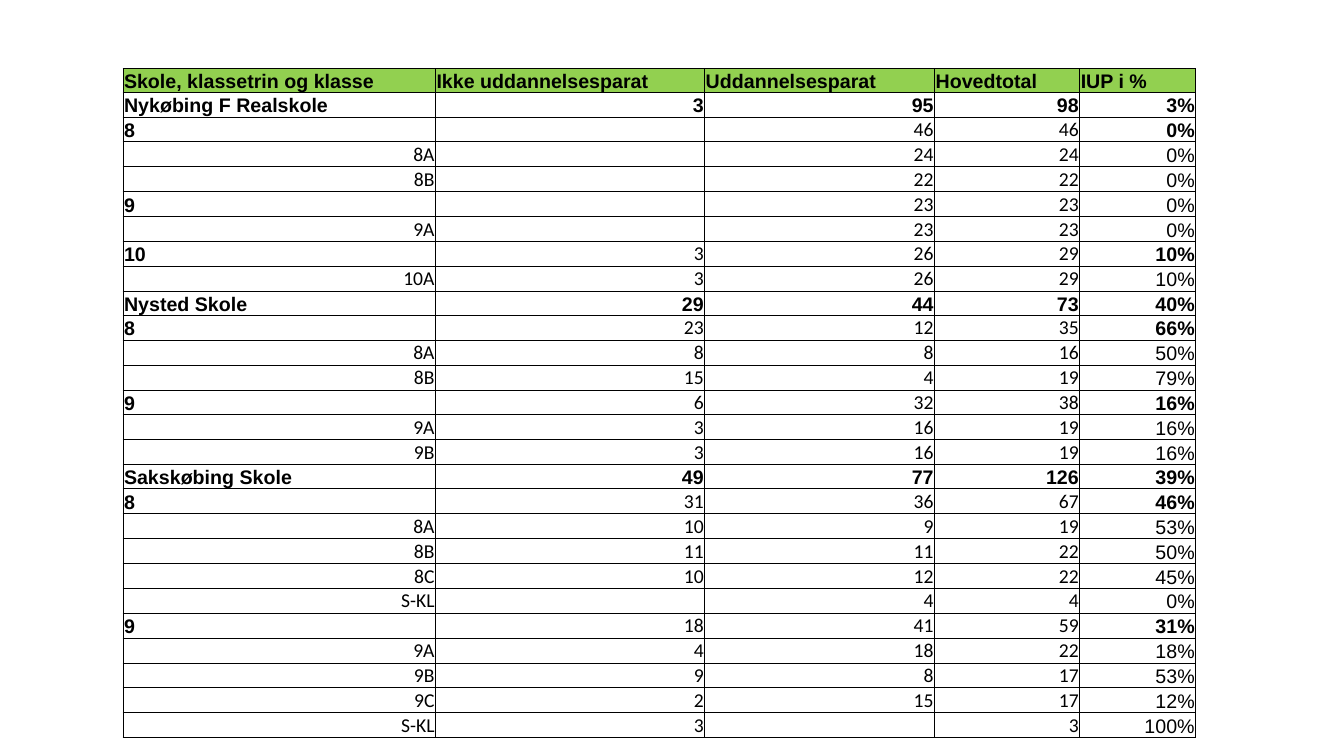
from lxml import etree
from pptx import Presentation
from pptx import util as u
from pptx.dml.color import RGBColor
from pptx.enum import text
from pptx.oxml import ns

HEADINGS = ["Skole, klassetrin og klasse", "Ikke uddannelsesparat",
            "Uddannelsesparat", "Hovedtotal", "IUP i %"]
COLUMN_WIDTHS = [3.1, 2.67, 2.28, 1.44, 1.15]
ROW_HEIGHT = 0.24
TABLE_LEFT, TABLE_TOP = 1.22, 0.68
BLACK, GREEN = "000000", "92D050"

SCHOOL, GRADE, CLASS = range(3)
ROWS = [
    (SCHOOL, "Nykøbing F Realskole", 3, 95),
    (GRADE, "8", 0, 46),
    (CLASS, "8A", 0, 24),
    (CLASS, "8B", 0, 22),
    (GRADE, "9", 0, 23),
    (CLASS, "9A", 0, 23),
    (GRADE, "10", 3, 26),
    (CLASS, "10A", 3, 26),
    (SCHOOL, "Nysted Skole", 29, 44),
    (GRADE, "8", 23, 12),
    (CLASS, "8A", 8, 8),
    (CLASS, "8B", 15, 4),
    (GRADE, "9", 6, 32),
    (CLASS, "9A", 3, 16),
    (CLASS, "9B", 3, 16),
    (SCHOOL, "Sakskøbing Skole", 49, 77),
    (GRADE, "8", 31, 36),
    (CLASS, "8A", 10, 9),
    (CLASS, "8B", 11, 11),
    (CLASS, "8C", 10, 12),
    (CLASS, "S-KL", 0, 4),
    (GRADE, "9", 18, 41),
    (CLASS, "9A", 4, 18),
    (CLASS, "9B", 9, 8),
    (CLASS, "9C", 2, 15),
    (CLASS, "S-KL", 3, 0),
]
PLAIN_SHARE_ROW = 4


def color(value):
    return RGBColor.from_string(value)


def add_borders(cell):
    properties = cell._tc.get_or_add_tcPr()
    for side in ("lnL", "lnR", "lnT", "lnB"):
        line = etree.SubElement(properties, ns.qn(f"a:{side}"), w=str(u.Pt(0.5)))
        fill = etree.SubElement(line, ns.qn("a:solidFill"))
        etree.SubElement(fill, ns.qn("a:srgbClr"), val=BLACK)


def fill_cell(cell, content, font="Arial", bold=False, right=True, fill=None):
    add_borders(cell)
    if fill:
        cell.fill.solid()
        cell.fill.fore_color.rgb = color(fill)
    else:
        cell.fill.background()
    cell.margin_left = cell.margin_right = cell.margin_top = u.Inches(0.01)
    cell.margin_bottom = 0
    cell.vertical_anchor = text.MSO_ANCHOR.BOTTOM
    cell.text = content
    para = cell.text_frame.paragraphs[0]
    para.alignment = text.PP_ALIGN.RIGHT if right else text.PP_ALIGN.LEFT
    para.font.name = font
    para.font.size = u.Pt(14)
    para.font.bold = bold
    para.font.color.rgb = color(BLACK)
    if not content:
        etree.SubElement(para._p, ns.qn("a:endParaRPr"), sz="1400")


def fill_row(cells, index, level, label, not_ready, ready):
    total = not_ready + ready
    label_font = "Calibri" if level == CLASS else "Arial"
    count_font = "Arial" if level == SCHOOL else "Calibri"
    fill_cell(cells[0], label, label_font, level != CLASS, level == CLASS)
    for cell, count in zip(cells[1:4], (not_ready, ready, total)):
        fill_cell(cell, str(count or ""), count_font, level == SCHOOL)
    bold_share = level != CLASS and index != PLAIN_SHARE_ROW
    fill_cell(cells[4], f"{not_ready / total:.0%}", bold=bold_share)


def add_school_table(page):
    row_count = len(ROWS) + 1
    frame = page.shapes.add_table(
        row_count, len(HEADINGS), u.Inches(TABLE_LEFT), u.Inches(TABLE_TOP),
        u.Inches(sum(COLUMN_WIDTHS)), u.Inches(ROW_HEIGHT * row_count))
    table = frame.table
    table.first_row = table.horz_banding = False
    for column, width in zip(table.columns, COLUMN_WIDTHS):
        column.width = u.Inches(width)
    for row in table.rows:
        row.height = u.Inches(ROW_HEIGHT)
    for cell, heading in zip(table.rows[0].cells, HEADINGS):
        fill_cell(cell, heading, bold=True, right=False, fill=GREEN)
    for index, values in enumerate(ROWS):
        fill_row(list(table.rows[index + 1].cells), index, *values)


def main():
    deck = Presentation()
    deck.slide_width, deck.slide_height = u.Inches(13.33), u.Inches(7.5)
    page = deck.slides.add_slide(deck.slide_layouts[6])
    add_school_table(page)
    deck.save("out.pptx")


if __name__ == "__main__":
    main()
